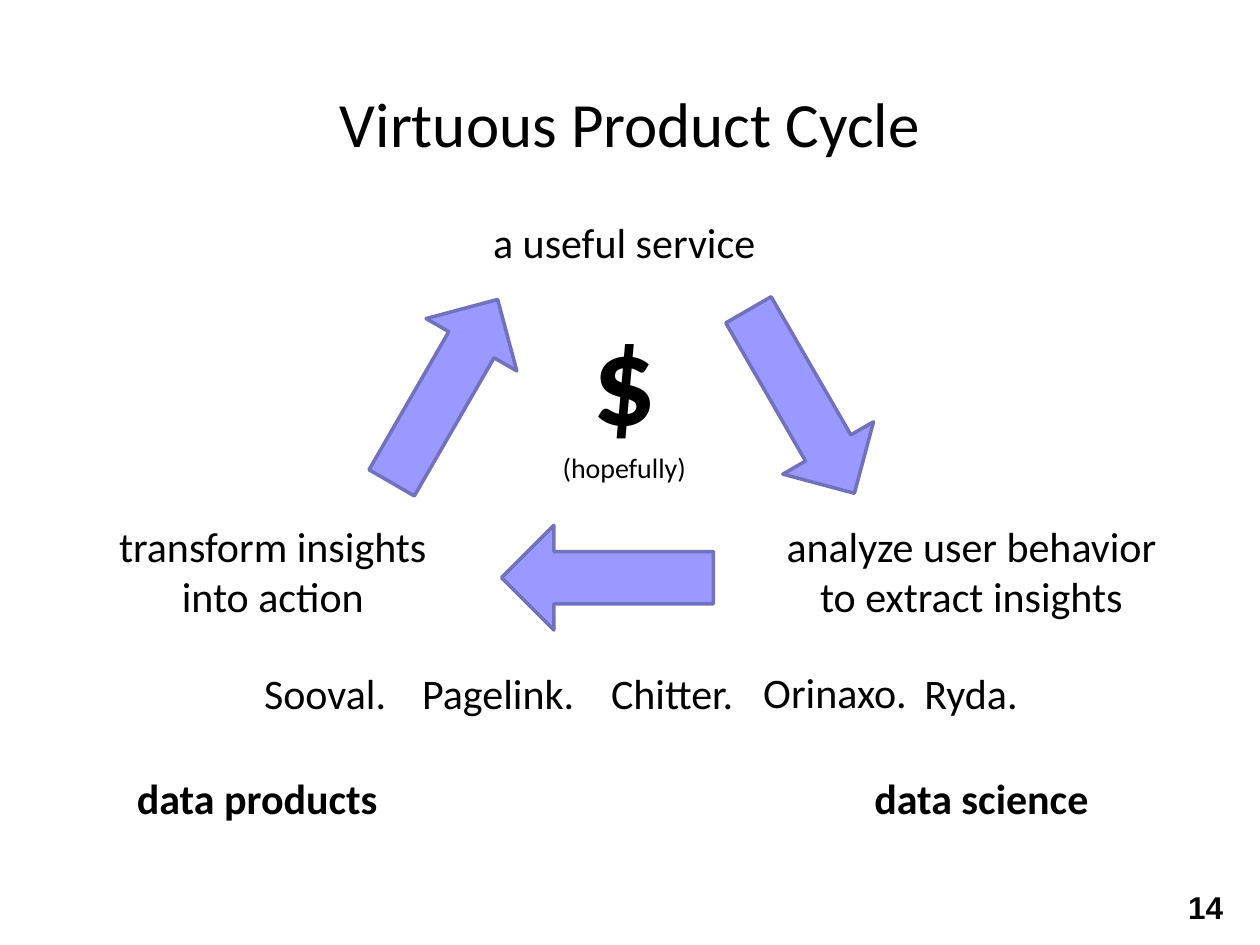
"""Build the Virtuous Product Cycle slide."""
from pptx import Presentation
from pptx.dml.color import RGBColor
from pptx.enum.shapes import MSO_SHAPE as Preset
from pptx.enum.text import MSO_ANCHOR as Anchor, PP_ALIGN as Align
from pptx.util import Cm, Pt

BLACK, ARROW_FILL, ARROW_LINE = "000000", "9999FF", "7171BD"
ARROW_SIZE = (4.27, 2.11)

TITLE = ("Virtuous Product Cycle", 0, 1.52, 25.4, 1.91)
STAGES = [
    ("a useful service", 9.09, 4.24, 6.99, 1.27),
    ("analyze user behavior to extract insights", 15.24, 10.36, 8.69, 2.31),
    ("transform insights into action", 2.11, 10.36, 6.78, 2.31),
]
PAYOFF = ("$\v(hopefully)", 9.09, 5.92, 6.99, 4.01)
COMPANIES = [
    ("Sooval.", 4.65, 13.34, 3.81, 1.27),
    ("Pagelink.", 7.82, 13.34, 4.45, 1.27),
    ("Chitter.", 11.86, 13.34, 3.38, 1.27),
    ("Orinaxo.", 14.61, 13.31, 4.45, 1.27),
    ("Ryda.", 17.35, 13.34, 4.45, 1.27),
]
FIELDS = [
    ("data science", 15.44, 15.44, 8.69, 1.27),
    ("data products", 0.84, 15.44, 8.69, 1.27),
]
PAGE_NUMBER = ("14", 23.7, 17.78, 1.47, 1.02)
ARROWS = [(14.02, 7.04, 60), (10.11, 10.59, 180), (6.83, 6.83, 300)]


def color(value):
    return RGBColor.from_string(value)


def add_text(slide, label, sizes=(24,), bold=(False,), font="Calibri",
             align=Align.CENTER, anchor=Anchor.TOP):
    text, *box = label
    text_frame = slide.shapes.add_textbox(*map(Cm, box)).text_frame
    text_frame.word_wrap = True
    text_frame.vertical_anchor = anchor
    paragraph = text_frame.paragraphs[0]
    paragraph.text = text
    paragraph.alignment = align
    for run, size, is_bold in zip(paragraph.runs, sizes, bold):
        run.font.name = font
        run.font.size = Pt(size)
        run.font.bold = is_bold
        run.font.color.rgb = color(BLACK)


def add_arrow(slide, left, top, rotation):
    shape = slide.shapes.add_shape(
        Preset.RIGHT_ARROW, Cm(left), Cm(top), *map(Cm, ARROW_SIZE))
    shape.rotation = rotation
    shape.shadow.inherit = False
    shape.fill.solid()
    shape.fill.fore_color.rgb = color(ARROW_FILL)
    shape.line.color.rgb = color(ARROW_LINE)
    shape.line.width = Pt(2)


def main():
    presentation = Presentation()
    presentation.slide_width, presentation.slide_height = Cm(25.4), Cm(19.05)
    slide = presentation.slides.add_slide(presentation.slide_layouts[6])
    for stage in STAGES:
        add_text(slide, stage)
    for arrow in ARROWS:
        add_arrow(slide, *arrow)
    add_text(slide, PAYOFF, sizes=(72, 16), bold=(True, False))
    for company in COMPANIES:
        add_text(slide, company)
    for field in FIELDS:
        add_text(slide, field, bold=(True,))
    add_text(slide, TITLE, sizes=(36,), anchor=Anchor.MIDDLE)
    add_text(slide, PAGE_NUMBER, sizes=(18,), bold=(True,), font="Arial",
             align=Align.LEFT)
    presentation.save("out.pptx")


if __name__ == "__main__":
    main()
